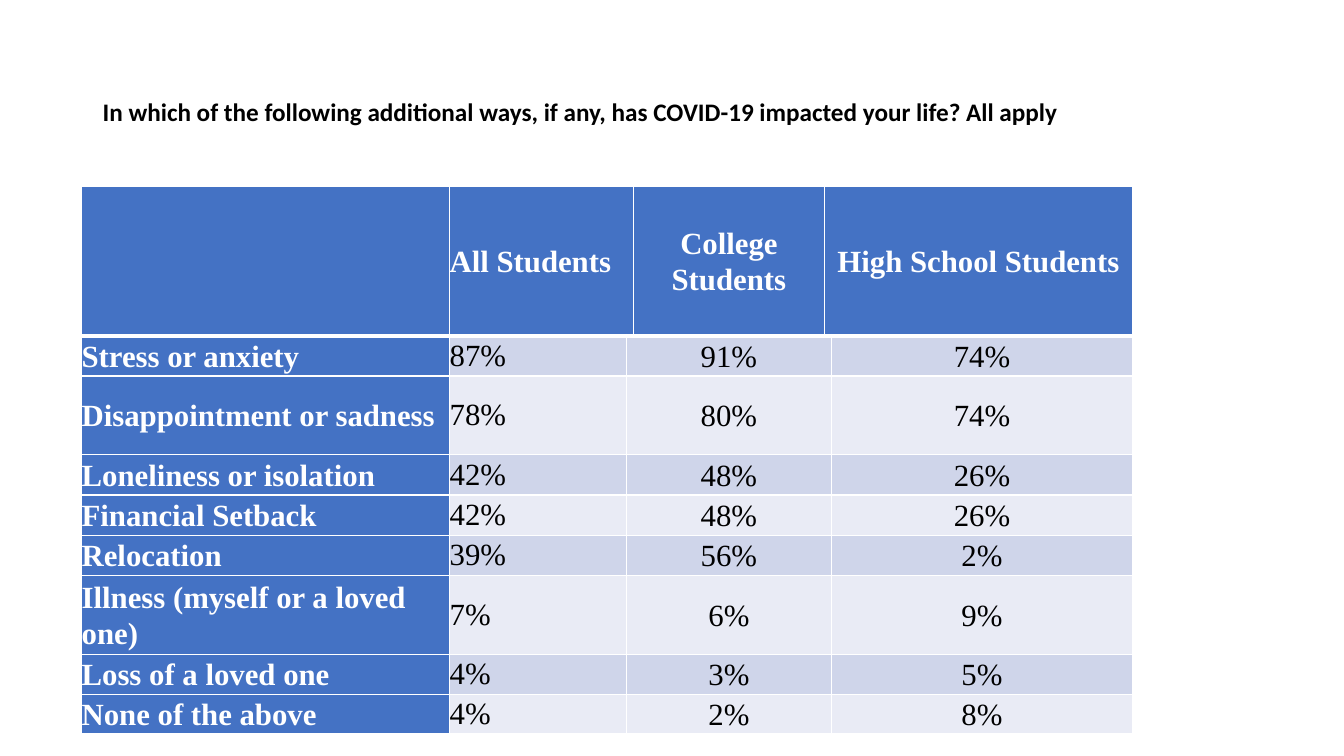
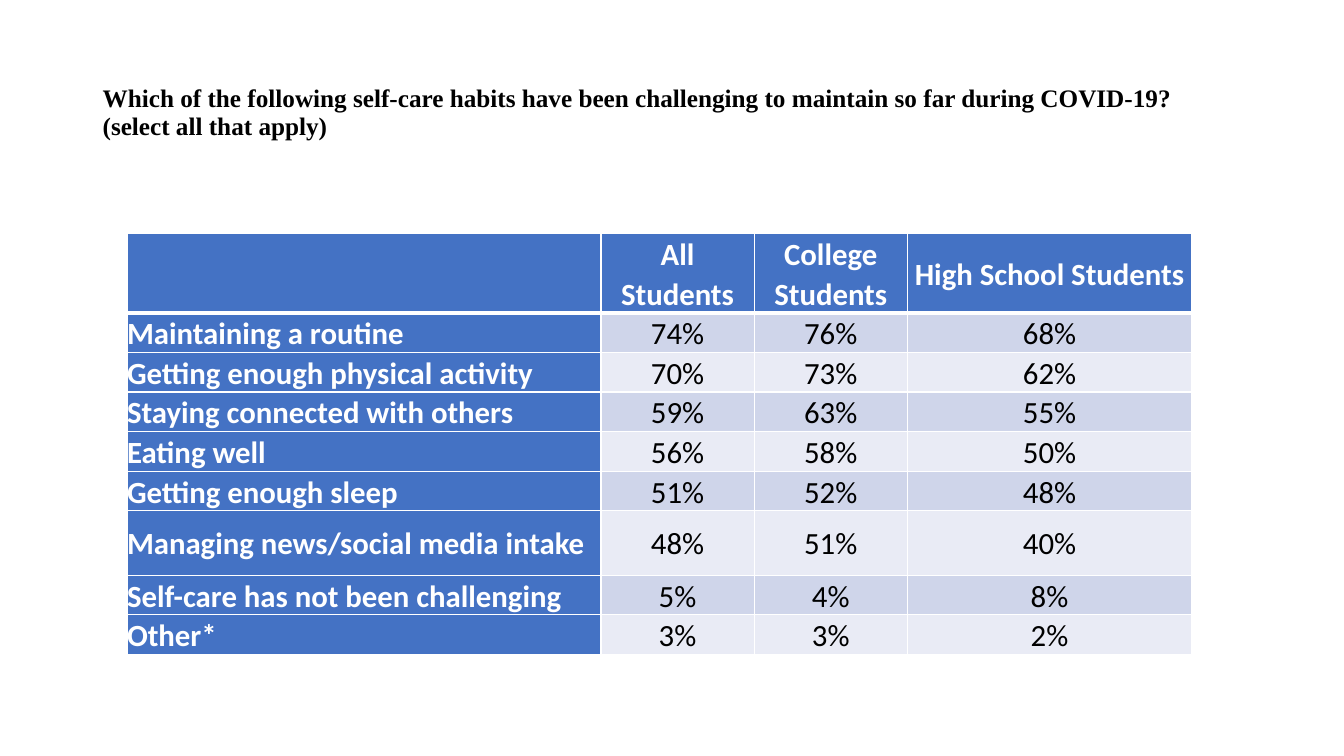
from itertools import pairwise

from lxml.etree import SubElement
from pptx import Presentation
from pptx.dml.color import RGBColor
from pptx.enum.text import MSO_ANCHOR as Anchor, PP_ALIGN as Align
from pptx.oxml.ns import qn
from pptx.util import Inches, Pt

COLORS = {
    "header": "4472C4",
    "odd": "CFD5EA",
    "even": "E9EBF5",
    "light": "FFFFFF",
    "dark": "000000",
}
SERIF, SANS = "Times New Roman", "Calibri"
TITLE_BOX = (9.2, 4, 115, 14.5)
HEADERS = ("", "All Students", "College Students", "High School Students")

IMPACTS = [
    ("Stress or anxiety", 87, 91, 74),
    ("Disappointment or sadness", 78, 80, 74),
    ("Loneliness or isolation", 42, 48, 26),
    ("Financial Setback", 42, 48, 26),
    ("Relocation", 39, 56, 2),
    ("Illness (myself or a loved one)", 7, 6, 9),
    ("Loss of a loved one", 4, 3, 5),
    ("None of the above", 4, 2, 8),
]
HABITS = [
    ("Maintaining a routine", 74, 76, 68),
    ("Getting enough physical activity", 70, 73, 62),
    ("Staying connected with others", 59, 63, 55),
    ("Eating well", 56, 58, 50),
    ("Getting enough sleep", 51, 52, 48),
    ("Managing news/social media intake", 48, 51, 40),
    ("Self-care has not been challenging", 5, 4, 8),
    ("Other*", 3, 3, 2),
]


def grid(units):
    return Inches(units / 10)


def color(name):
    return RGBColor.from_string(COLORS[name])


def write(paragraph, text, font, size, color_name, bold, align, spacing):
    paragraph.alignment = align
    paragraph.line_spacing = spacing
    run = paragraph.add_run()
    run.text = text
    run.font.name = font
    run.font.size = Pt(size)
    run.font.bold = bold
    run.font.color.rgb = color(color_name)


def add_title(slide, text, font):
    shape = slide.shapes.add_textbox(*map(grid, TITLE_BOX))
    frame = shape.text_frame
    frame.word_wrap = True
    frame.vertical_anchor = Anchor.MIDDLE
    write(frame.paragraphs[0], text, font, 18, "dark", True, Align.LEFT, 0.9)


def set_borders(cell, top, bottom):
    properties = cell._tc.get_or_add_tcPr()
    widths = {"a:lnL": 1, "a:lnR": 1, "a:lnT": top, "a:lnB": bottom}
    for tag, width in widths.items():
        line = SubElement(properties, qn(tag), w=str(Pt(width)))
        fill = SubElement(line, qn("a:solidFill"))
        SubElement(fill, qn("a:srgbClr"), val=COLORS["light"])


def style_cell(cell, row, is_label):
    set_borders(cell, 3 if row == 1 else 1, 3 if row == 0 else 1)
    cell.fill.solid()
    banding = "odd" if row % 2 else "even"
    cell.fill.fore_color.rgb = color("header" if is_label else banding)
    cell.margin_left = cell.margin_right = 0
    cell.margin_top = cell.margin_bottom = 0
    cell.vertical_anchor = Anchor.MIDDLE


def fill_row(table, row, texts, starts, font, left_columns):
    edges = pairwise((*starts, len(table.columns)))
    for index, (text, (start, end)) in enumerate(zip(texts, edges)):
        is_label = row == 0 or index == 0
        for column in range(start, end):
            style_cell(table.cell(row, column), row, is_label)
        cell = table.cell(row, start)
        if end - start > 1:
            cell.merge(table.cell(row, end - 1))
        if text:
            is_left = index in left_columns
            spacing = 1.0 if is_left and not is_label else 1.07
            write(cell.text_frame.paragraphs[0], text, font, 22,
                  "light" if is_label else "dark", is_label,
                  Align.LEFT if is_left else Align.CENTER, spacing)


def add_survey_table(slide, corner, widths, heights, answers, font,
                     header_starts, body_starts, left_columns):
    size = (sum(widths), sum(heights))
    frame = slide.shapes.add_table(
        len(heights), len(widths), *map(grid, (*corner, *size)))
    table = frame.table
    table.first_row = table.horz_banding = False
    for column, width in zip(table.columns, widths):
        column.width = grid(width)
    for row, height in zip(table.rows, heights):
        row.height = grid(height)
    fill_row(table, 0, HEADERS, header_starts, font, left_columns)
    for row, (label, *shares) in enumerate(answers, 1):
        texts = (label, *(f"{share}%" for share in shares))
        fill_row(table, row, texts, body_starts, font, left_columns)


def main():
    presentation = Presentation()
    presentation.slide_width = Inches(13.33)
    presentation.slide_height = Inches(7.5)
    blank = presentation.slide_layouts[6]

    slide = presentation.slides.add_slide(blank)
    add_title(slide, "In which of the following additional ways, if any, "
              "has COVID-19 impacted your life? All apply", SANS)
    add_survey_table(
        slide, (8.1, 18.5), (36.5, 17.5, 0.7, 19, 0.7, 29.8),
        (14.8, 4, 7.8, 4, 4, 4, 7.8, 3.8, 3.8), IMPACTS, SERIF,
        header_starts=(0, 1, 3, 4), body_starts=(0, 1, 2, 5),
        left_columns=(0, 1))

    slide = presentation.slides.add_slide(blank)
    add_title(slide, "Which of the following self-care habits have been "
              "challenging to maintain so far during COVID-19? "
              "(select all that apply)", SERIF)
    add_survey_table(
        slide, (12.6, 23.2), (47, 15.2, 15.2, 28.2),
        (6.4, *[3.7] * 5, 6.4, 3.7, 3.7), HABITS, SANS,
        header_starts=range(4), body_starts=range(4), left_columns=(0,))

    presentation.save("out.pptx")


if __name__ == "__main__":
    main()
